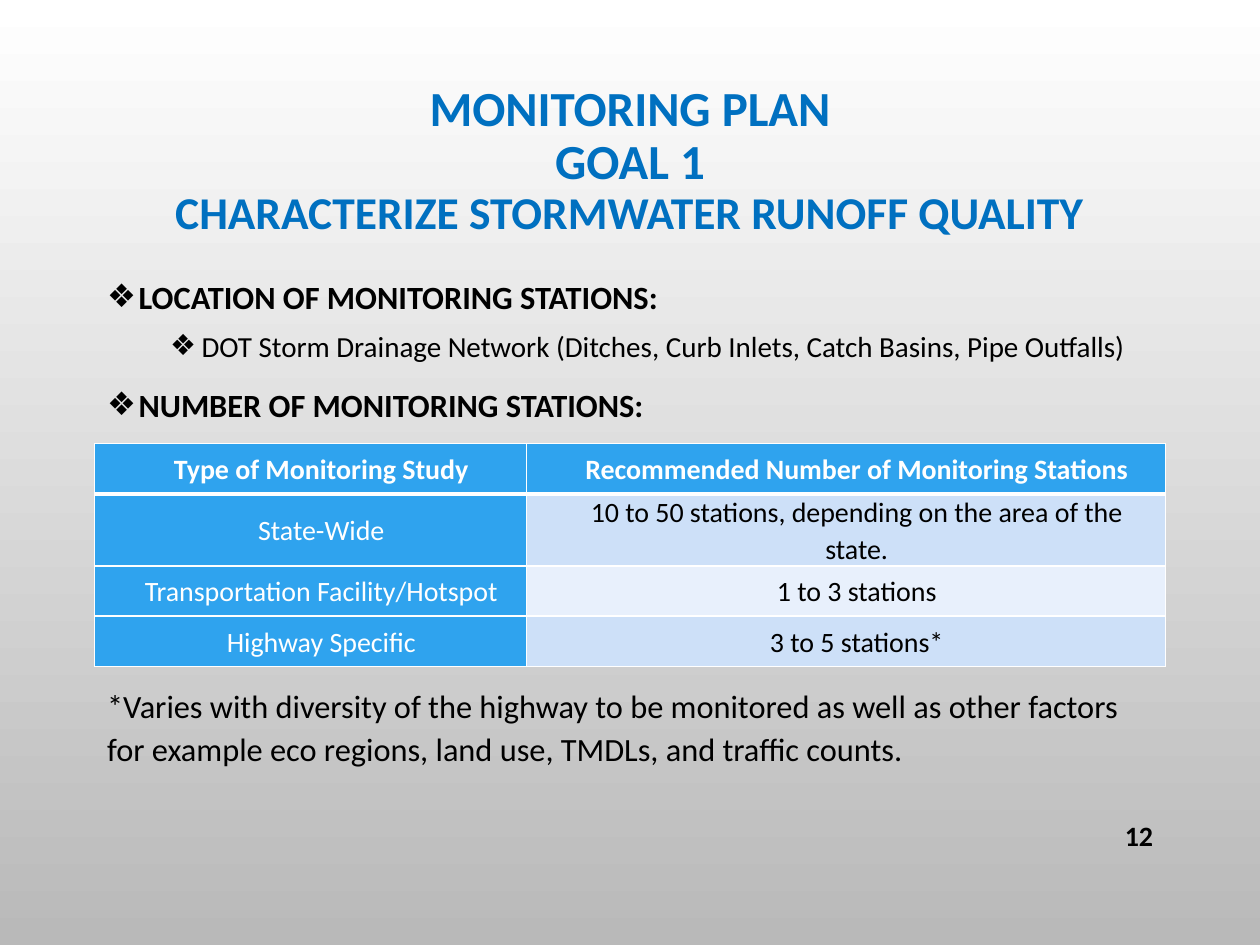
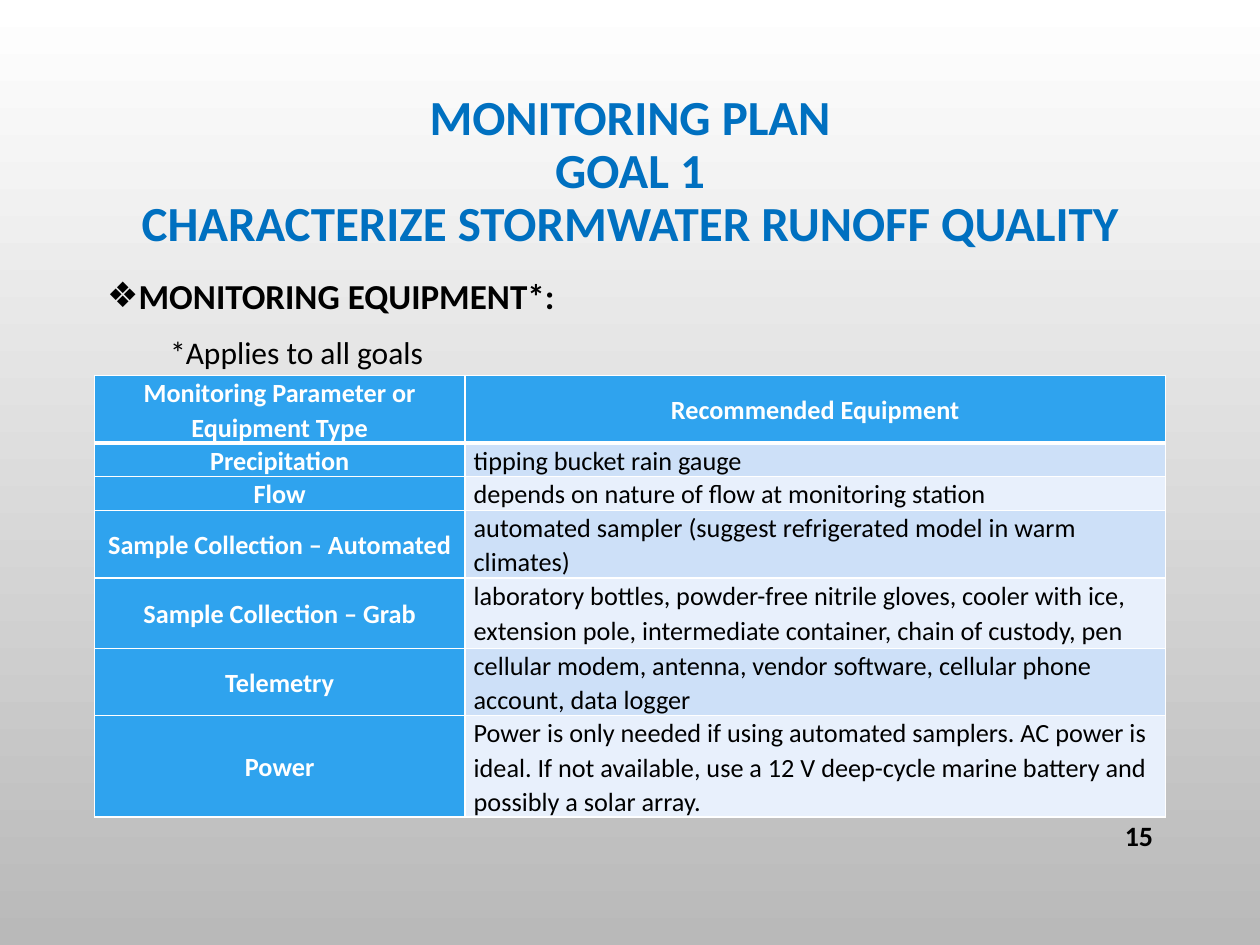
from copy import deepcopy

from lxml import etree
from pptx import Presentation
from pptx.dml.color import RGBColor
from pptx.enum.text import MSO_ANCHOR, MSO_AUTO_SIZE, PP_ALIGN
from pptx.oxml.ns import qn
from pptx.util import Emu, Inches, Pt

LEFT, CENTER, RIGHT = PP_ALIGN.LEFT, PP_ALIGN.CENTER, PP_ALIGN.RIGHT
MIDDLE, TOP = MSO_ANCHOR.MIDDLE, MSO_ANCHOR.TOP
NO_FIT = MSO_AUTO_SIZE.NONE

GRID_COLUMNS, GRID_ROWS = 40, 30
MARGIN, CONTENT_WIDTH = 3, 34

TITLE_LINES = ["MONITORING PLAN", "GOAL 1", "CHARACTERIZE STORMWATER RUNOFF QUALITY"]

STATIONS = [
    ("Type of Monitoring Study", "Recommended Number of Monitoring Stations"),
    ("State-Wide", "10 to 50 stations, depending on the area of the state."),
    ("Transportation Facility/Hotspot", "1 to 3 stations"),
    ("Highway Specific", "3 to 5 stations*"),
]

EQUIPMENT = [
    ("Monitoring Parameter or Equipment Type", "Recommended Equipment"),
    ("Precipitation", "tipping bucket rain gauge"),
    ("Flow", "depends on nature of flow at monitoring station"),
    ("Sample Collection – Automated",
     "automated sampler (suggest refrigerated model in warm climates)"),
    ("Sample Collection – Grab",
     "laboratory bottles, powder-free nitrile gloves, cooler with ice, "
     "extension pole, intermediate container, chain of custody, pen"),
    ("Telemetry",
     "cellular modem, antenna, vendor software, cellular phone account, data logger"),
    ("Power",
     "Power is only needed if using automated samplers. AC power is ideal. "
     "If not available, use a 12 V deep-cycle marine battery and possibly a solar array."),
]


def color(hex_string):
    return RGBColor.from_string(hex_string)


class MonitoringDeck:
    font = "Calibri"
    title_blue = "0070C0"
    table_blue = "2FA3EE"
    bands = ("CDE0F8", "E8F0FC")
    black, white, gray = "000000", "FFFFFF", "B9B9B9"

    def __init__(self):
        self.deck = Presentation()
        self.deck.slide_width, self.deck.slide_height = Inches(10), Inches(7.5)
        self.page = None
        fill = self.deck.slide_master.background.fill
        fill.gradient()
        fill.gradient_angle = 270
        for stop, shade in zip(fill.gradient_stops, (self.white, self.gray)):
            stop.color.rgb = color(shade)

    def across(self, columns):
        return Emu(round(self.deck.slide_width * columns / GRID_COLUMNS))

    def down(self, rows):
        return Emu(round(self.deck.slide_height * rows / GRID_ROWS))

    def area(self, left, top, width, height):
        return self.across(left), self.down(top), self.across(width), self.down(height)

    def place(self, box, top, height, anchor):
        box.left, box.top, box.width, box.height = self.area(
            MARGIN, top, CONTENT_WIDTH, height)
        frame = box.text_frame
        frame.word_wrap, frame.auto_size, frame.vertical_anchor = True, NO_FIT, anchor
        return frame

    def add_span(self, para, text, size, shade, bold):
        span = para.add_run()
        span.text = text
        font = span.font
        font.name, font.size, font.bold = self.font, Pt(size), bold
        font.color.rgb = color(shade)
        return span

    def indent(self, para, margin, first=0):
        properties = para._p.get_or_add_pPr()
        properties.set("marL", str(Inches(margin)))
        properties.set("indent", str(Inches(first)))
        return properties

    def add_page(self):
        self.page = self.deck.slides.add_slide(self.deck.slide_layouts[1])

    def add_title(self, top, height, sizes):
        para = self.place(self.page.shapes.title, top, height, MIDDLE).paragraphs[0]
        para.alignment, para.line_spacing = CENTER, 0.9
        for number, (line, size) in enumerate(zip(TITLE_LINES, sizes)):
            if number:
                para.add_line_break()
                para._p[-1].append(deepcopy(span._r.rPr))
            span = self.add_span(para, line, size, self.title_blue, True)

    def add_body(self, top, spacing, items):
        frame = self.place(self.page.placeholders[1], top, 17.12, TOP)
        for number, (text, size, level, margin, bulleted, before) in enumerate(items):
            para = frame.add_paragraph() if number else frame.paragraphs[0]
            para.level = level
            properties = self.indent(para, margin, -0.25 if bulleted else 0)
            if bulleted:
                tint = etree.SubElement(properties, qn("a:buClr"))
                etree.SubElement(tint, qn("a:srgbClr"), val=self.black)
                etree.SubElement(properties, qn("a:buChar"), char="❖")
            else:
                etree.SubElement(properties, qn("a:buNone"))
            para.line_spacing, para.space_before = spacing, Pt(before)
            self.add_span(para, text, size, self.black, bulleted and level == 0)

    def add_number(self, number):
        box = self.page.shapes.add_textbox(*self.area(34.48, 25.72, 2.52, 1.6))
        frame = box.text_frame
        frame.word_wrap, frame.vertical_anchor = True, MIDDLE
        para = frame.paragraphs[0]
        para.alignment = RIGHT
        self.add_span(para, number, 16, self.black, True)

    def add_borders(self, cell, row):
        widths = {"L": 1, "R": 1, "T": 3 if row == 1 else 1, "B": 3 if row == 0 else 1}
        for side, width in widths.items():
            line = etree.SubElement(
                cell._tc.get_or_add_tcPr(), qn(f"a:ln{side}"), w=str(Pt(width)))
            paint = etree.SubElement(line, qn("a:solidFill"))
            etree.SubElement(paint, qn("a:srgbClr"), val=self.white)

    def add_table(self, top, entries, widths, heights, size,
                  margin=0, labels_bold=False, values_align=CENTER):
        table = self.page.shapes.add_table(
            len(entries), len(widths),
            *self.area(MARGIN, top, CONTENT_WIDTH, sum(heights))).table
        for column, width in zip(table.columns, widths):
            column.width = self.across(width)
        for row, (entry, height) in enumerate(zip(entries, heights)):
            table.rows[row].height = self.down(height)
            for column, text in enumerate(entry):
                cell = table.cell(row, column)
                is_value = row > 0 and column > 0
                self.add_borders(cell, row)
                cell.fill.solid()
                cell.fill.fore_color.rgb = color(
                    self.bands[(row - 1) % 2] if is_value else self.table_blue)
                cell.vertical_anchor = MIDDLE
                cell.margin_left = cell.margin_right = Inches(0.07)
                cell.margin_top = cell.margin_bottom = 0
                para = cell.text_frame.paragraphs[0]
                self.indent(para, margin)
                para.alignment = values_align if is_value else CENTER
                para.line_spacing = 1.07
                self.add_span(para, text, size, self.black if is_value else self.white,
                              row == 0 or (column == 0 and labels_bold))


def main():
    show = MonitoringDeck()

    show.add_page()
    show.add_title(2.04, 6.2, (28, 28, 26))
    show.add_body(8.48, 1.1, [
        ("LOCATION OF MONITORING STATIONS:", 18.5, 0, 0.25, True, 0),
        ("DOT Storm Drainage Network (Ditches, Curb Inlets, Catch Basins, Pipe Outfalls)",
         16.6, 1, 0.75, True, 5),
        ("NUMBER OF MONITORING STATIONS:", 18.5, 0, 0.25, True, 10),
        ("*Varies with diversity of the highway to be monitored as well as other factors "
         "for example eco regions, land use, TMDLs, and traffic counts.",
         18.5, 0, 0, False, 148),
    ])
    show.add_number("12")
    show.add_table(14.08, STATIONS, (13.72, 20.28), [1.6] * len(STATIONS), 16, margin=0.17)

    show.add_page()
    show.add_title(2.72, 5.52, (28, 28, 28))
    show.add_body(8.24, 1.2, [
        ("MONITORING EQUIPMENT*:", 20, 0, 0.25, True, 0),
        ("*Applies to all goals", 18, 1, 0.5, False, 5),
    ])
    show.add_number("15")
    show.add_table(11.92, EQUIPMENT, (11.76, 22.24),
                   (2.12, 0.88, 0.88, 1.16, 2.24, 0.88, 2), 15,
                   labels_bold=True, values_align=LEFT)

    show.deck.save("out.pptx")


if __name__ == "__main__":
    main()
